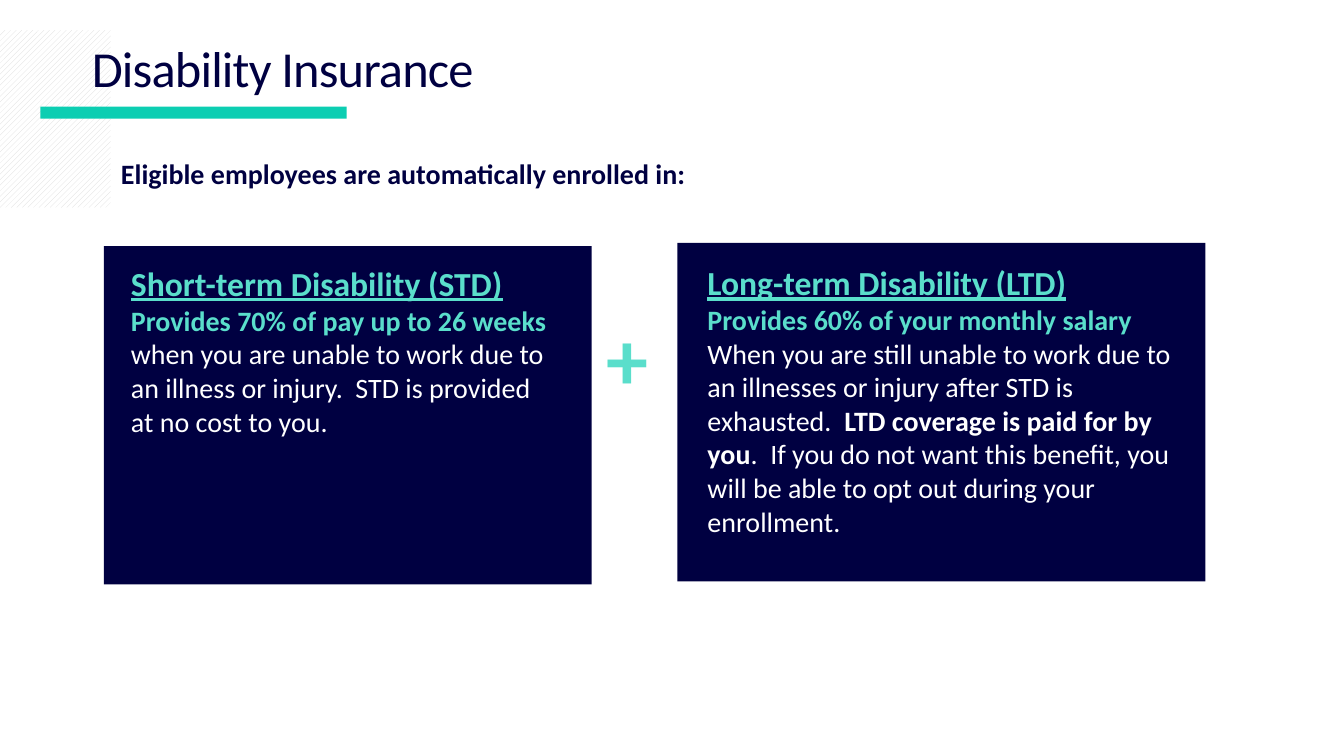
from pptx import Presentation
from pptx.dml.color import RGBColor
from pptx.enum.dml import MSO_PATTERN
from pptx.enum.shapes import MSO_SHAPE
from pptx.enum.text import MSO_ANCHOR, MSO_AUTO_SIZE, PP_ALIGN
from pptx.util import Cm, Pt

FONT = "Calibri"
NAVY = "000041"
TEAL = "0CCEB2"
AQUA = "5ADECB"
WHITE = "FFFFFF"
GREY = "D9D9D9"
PANEL_HEIGHT = 8.53


def color(hex_string):
    return RGBColor.from_string(hex_string)


def add_block(slide, left, top, width, height, fill):
    """Add a borderless rectangle in one colour."""
    shape = slide.shapes.add_shape(
        MSO_SHAPE.RECTANGLE, Cm(left), Cm(top), Cm(width), Cm(height))
    shape.shadow.inherit = False
    shape.line.fill.background()
    shape.fill.solid()
    shape.fill.fore_color.rgb = color(fill)
    return shape


def add_hatched_block(slide, left, top, width, height):
    shape = add_block(slide, left, top, width, height, WHITE)
    shape.fill.patterned()
    shape.fill.pattern = MSO_PATTERN.WIDE_UPWARD_DIAGONAL
    shape.fill.fore_color.rgb = color(GREY)
    shape.fill.back_color.rgb = color(WHITE)


def add_run(paragraph, text, size, fill, bold=False, underline=False):
    run = paragraph.add_run()
    run.text = text
    font = run.font
    font.name, font.size = FONT, Pt(size)
    font.bold, font.underline = bold, underline
    font.color.rgb = color(fill)
    return run


def add_text(slide, left, top, width, height, paragraphs):
    """Add a wrapping text box; each paragraph is a list of run settings."""
    box = slide.shapes.add_textbox(Cm(left), Cm(top), Cm(width), Cm(height))
    frame = box.text_frame
    frame.word_wrap = True
    for index, runs in enumerate(paragraphs):
        paragraph = frame.add_paragraph() if index else frame.paragraphs[0]
        for run in runs:
            add_run(paragraph, *run)
    return frame


def set_title(slide, text):
    title = slide.shapes.title
    title.left, title.top = Cm(2.06), Cm(0.41)
    title.width, title.height = Cm(17.17), Cm(2.77)
    frame = title.text_frame
    frame.auto_size = MSO_AUTO_SIZE.NONE
    frame.vertical_anchor = MSO_ANCHOR.MIDDLE
    paragraph = frame.paragraphs[0]
    paragraph.alignment = PP_ALIGN.LEFT
    paragraph.line_spacing = 0.9
    run = add_run(paragraph, text, 36, NAVY)
    run.font._element.set("spc", "-60")
    # Bring the title in front of the hatched block
    title.element.getparent().append(title.element)


def add_lead(slide, text):
    frame = add_text(slide, 3.05, 3.45, 19.18, 1.73, [[(text, 20, NAVY, True)]])
    frame.margin_left = frame.margin_right = 0
    frame.margin_top = frame.margin_bottom = 0
    frame.vertical_anchor = MSO_ANCHOR.MIDDLE
    frame.paragraphs[0].line_spacing = 1.1


def add_plus(slide):
    frame = add_text(slide, 14.53, 8.1, 2.54, 2.36, [[("+", 60, AQUA, True)]])
    frame.paragraphs[0].alignment = PP_ALIGN.CENTER
    frame.paragraphs[0].line_spacing = 0.8


def main():
    presentation = Presentation()
    presentation.slide_width, presentation.slide_height = Cm(33.87), Cm(19.05)
    slide = presentation.slides.add_slide(presentation.slide_layouts[5])

    # Decoration and heading
    add_hatched_block(slide, 0, 0.76, 2.79, 4.47)
    add_block(slide, 1.02, 2.69, 7.72, 0.3, TEAL)
    set_title(slide, "Disability Insurance")
    add_lead(slide, "Eligible employees are automatically enrolled in:")

    # Short-term panel
    add_block(slide, 2.62, 6.2, 12.29, PANEL_HEIGHT, NAVY)
    add_text(slide, 3.05, 6.5, 11.13, 3, [
        [("Short-term Disability (STD)", 24, AQUA, True, True)],
        [("Provides 70% of pay up to 26 weeks ", 20, AQUA, True),
         ("when you are unable to work due to an illness or injury.  "
          "STD is provided at no cost to you.", 20, WHITE)],
    ])

    add_plus(slide)

    # Long-term panel
    add_block(slide, 17.07, 6.12, 13.31, PANEL_HEIGHT, NAVY)
    add_text(slide, 17.58, 6.48, 12.5, 3, [
        [("Long-term Disability (LTD)", 24, AQUA, True, True)],
        [("Provides 60% of your monthly salary", 20, AQUA, True)],
        [("When you are still unable to work due to an illnesses or injury "
          "after STD is exhausted.  ", 20, WHITE),
         ("LTD coverage is paid for by you", 20, WHITE, True),
         (".  If you do not want this benefit, you will be able to opt out "
          "during your enrollment.", 20, WHITE)],
    ])

    presentation.save("out.pptx")


if __name__ == "__main__":
    main()
